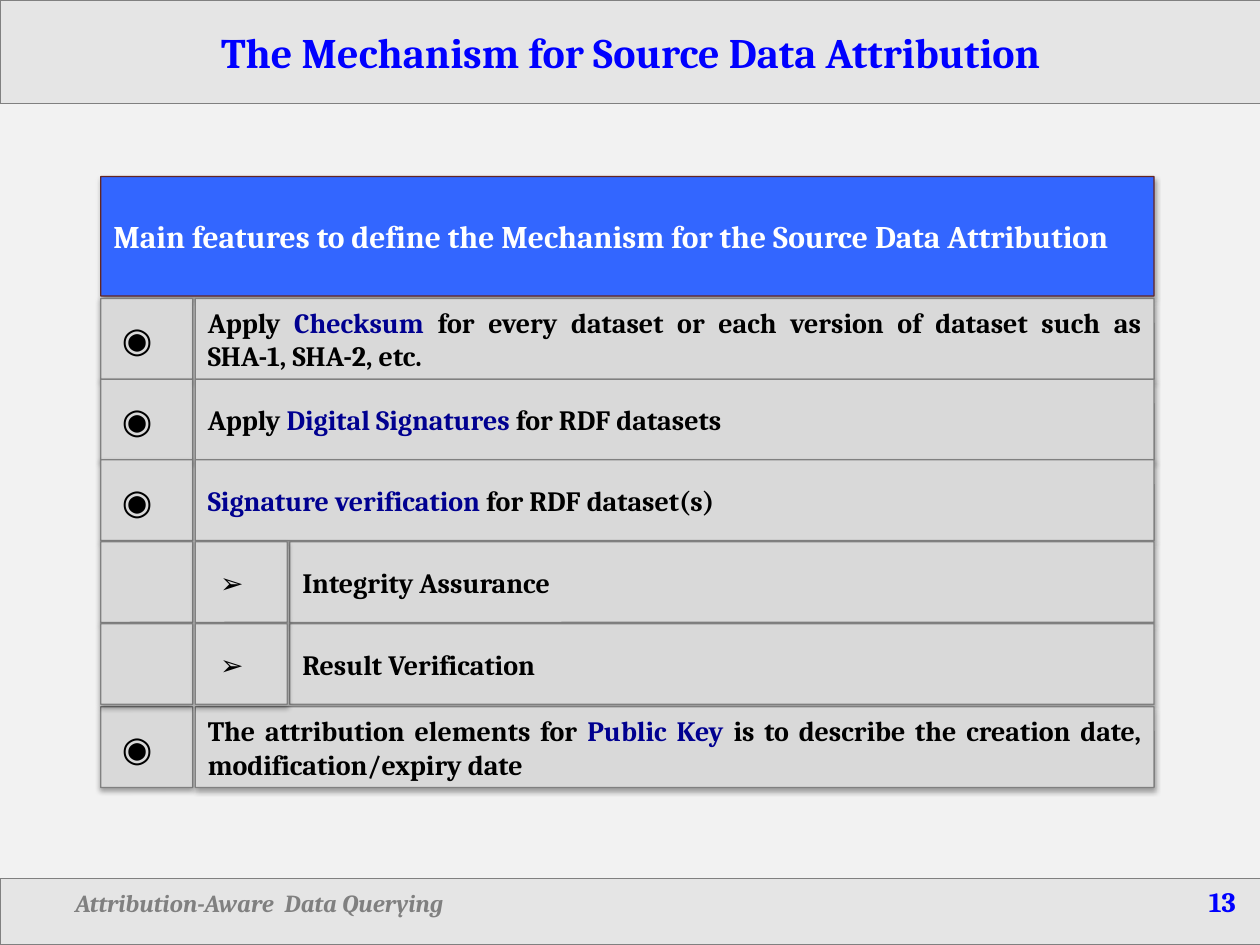
from lxml import etree
from pptx import Presentation
from pptx.dml.color import RGBColor
from pptx.enum.shapes import MSO_SHAPE
from pptx.enum.text import MSO_ANCHOR, PP_ALIGN
from pptx.oxml.ns import qn
from pptx.util import Inches, Pt

RECT, ROUND = MSO_SHAPE.RECTANGLE, MSO_SHAPE.ROUNDED_RECTANGLE
TOP, MIDDLE = MSO_ANCHOR.TOP, MSO_ANCHOR.MIDDLE
LEFT, CENTER, JUSTIFY = PP_ALIGN.LEFT, PP_ALIGN.CENTER, PP_ALIGN.JUSTIFY

PAPER = RGBColor(0xF2, 0xF2, 0xF2)
SILVER = RGBColor(0xD9, 0xD9, 0xD9)
GRAY = RGBColor(0x80, 0x80, 0x80)
BLUE = RGBColor(0x00, 0x00, 0xFF)
ROYAL = RGBColor(0x33, 0x66, 0xFF)
NAVY = RGBColor(0x00, 0x00, 0x90)
MAROON = RGBColor(0x63, 0x25, 0x23)
BLACK = RGBColor(0x00, 0x00, 0x00)
WHITE = RGBColor(0xFF, 0xFF, 0xFF)

# Grid: left edge, right edge, narrow column, gap, row height
X, RIGHT, COL, GAP, ROW = 0.8, 9.16, 0.73, 0.02, 0.64
STEP = COL + GAP
TOPS = (2.37, 3.01, 3.65, 4.3, 4.95, 5.61)

# Each row: depth, then (text, colour) runs
ROWS = (
    (1, (("Apply ", BLACK), ("Checksum ", NAVY),
         ("for every dataset or each version of dataset such as "
          "SHA-1, SHA-2, etc.", BLACK))),
    (1, (("Apply ", BLACK), ("Digital Signatures ", NAVY),
         ("for RDF datasets", BLACK))),
    (1, (("Signature verification ", NAVY), ("for RDF dataset(s)", BLACK))),
    (2, (("Integrity Assurance", BLACK),)),
    (2, (("Result Verification", BLACK),)),
    (1, (("The attribution elements for ", BLACK), ("Public Key ", NAVY),
         ("is to describe the creation date, modification/expiry date",
          BLACK))),
)


def add_box(slide, kind, x, y, w, h, fill, line=GRAY):
    box = slide.shapes.add_shape(kind, Inches(x), Inches(y),
                                 Inches(w), Inches(h))
    box.shadow.inherit = False
    box.fill.solid()
    box.fill.fore_color.rgb = fill
    box.line.color.rgb = line
    box.line.width = Pt(0.75)
    box.text_frame.word_wrap = True
    return box


def add_band(slide, y, h):
    """Half-transparent strip across the slide."""
    band = add_box(slide, RECT, 0, y, 10.01, h, SILVER)
    tint = band.fill._xPr.find(".//" + qn("a:srgbClr"))
    etree.SubElement(tint, qn("a:alpha"), val="50000")
    return band


def add_cell(slide, x, y, w, h=ROW, fill=SILVER, line=GRAY):
    """Table-like box with a soft shadow below."""
    cell = add_box(slide, ROUND, x, y, w, h, fill, line)
    cell.adjustments[0] = 0.005
    effects = cell._element.spPr.find(qn("a:effectLst"))
    shade = etree.SubElement(effects, qn("a:outerShdw"), blurRad="39370",
                             dist="22860", dir="5400000", rotWithShape="0")
    tint = etree.SubElement(shade, qn("a:srgbClr"), val="000000")
    etree.SubElement(tint, qn("a:alpha"), val="35000")
    return cell


def add_run(para, text, size, color, bold=True, italic=False,
            face="Cambria"):
    run = para.add_run()
    run.text = text
    font = run.font
    font.name, font.size = face, Pt(size)
    font.bold, font.italic = bold, italic
    font.color.rgb = color


def get_para(box, align, anchor=MIDDLE):
    box.text_frame.vertical_anchor = anchor
    para = box.text_frame.paragraphs[0]
    para.alignment = align
    return para


def add_mark(slide, x, y, sign="", size=16):
    cell = add_cell(slide, x, y, COL)
    if sign:
        cell.text_frame.margin_left = 0
        cell.text_frame.margin_right = Inches(0.15)
        add_run(get_para(cell, CENTER), sign, size, BLACK, False,
                face="Arial")


def add_row(slide, y, depth, runs):
    x = X + depth * STEP
    cell = add_cell(slide, x, y, RIGHT - x)
    para = get_para(cell, JUSTIFY)
    for text, color in runs:
        add_run(para, text, 16, color)


def add_footer(slide):
    para = get_para(add_band(slide, 6.97, 0.53), LEFT, TOP)
    para.space_before = Pt(2)
    stops = etree.SubElement(para._p.get_or_add_pPr(), qn("a:tabLst"))
    for place, side in ((0.5, "l"), (9.71, "r")):
        etree.SubElement(stops, qn("a:tab"), pos=str(Inches(place)),
                         algn=side)
    add_run(para, "\tAttribution-Aware  Data Querying\t", 14, GRAY,
            italic=True)
    add_run(para, "13", 16, BLUE)


def main():
    deck = Presentation()
    deck.slide_width, deck.slide_height = Inches(10), Inches(7.5)
    slide = deck.slides.add_slide(deck.slide_layouts[6])
    slide.background.fill.solid()
    slide.background.fill.fore_color.rgb = PAPER

    # Title and footer
    title = add_band(slide, 0, 0.82)
    add_run(get_para(title, CENTER),
            "The Mechanism for Source Data Attribution", 24, BLUE)
    add_footer(slide)

    # Heading of the feature list
    head = add_cell(slide, X, 1.4, RIGHT - X, 0.95, ROYAL, MAROON)
    add_run(get_para(head, LEFT),
            "Main features to define the Mechanism for the Source Data "
            "Attribution", 18, WHITE)

    # Main marks, then row texts, then nested marks on top
    for y, (depth, runs) in zip(TOPS, ROWS):
        if depth == 1:
            add_mark(slide, X, y, "◉", 20)
    for y, (depth, runs) in zip(TOPS, ROWS):
        add_row(slide, y, depth, runs)
    for y, (depth, runs) in zip(TOPS, ROWS):
        if depth == 2:
            add_mark(slide, X, y)
            add_mark(slide, X + STEP, y, "➢")

    deck.save("out.pptx")


if __name__ == "__main__":
    main()
